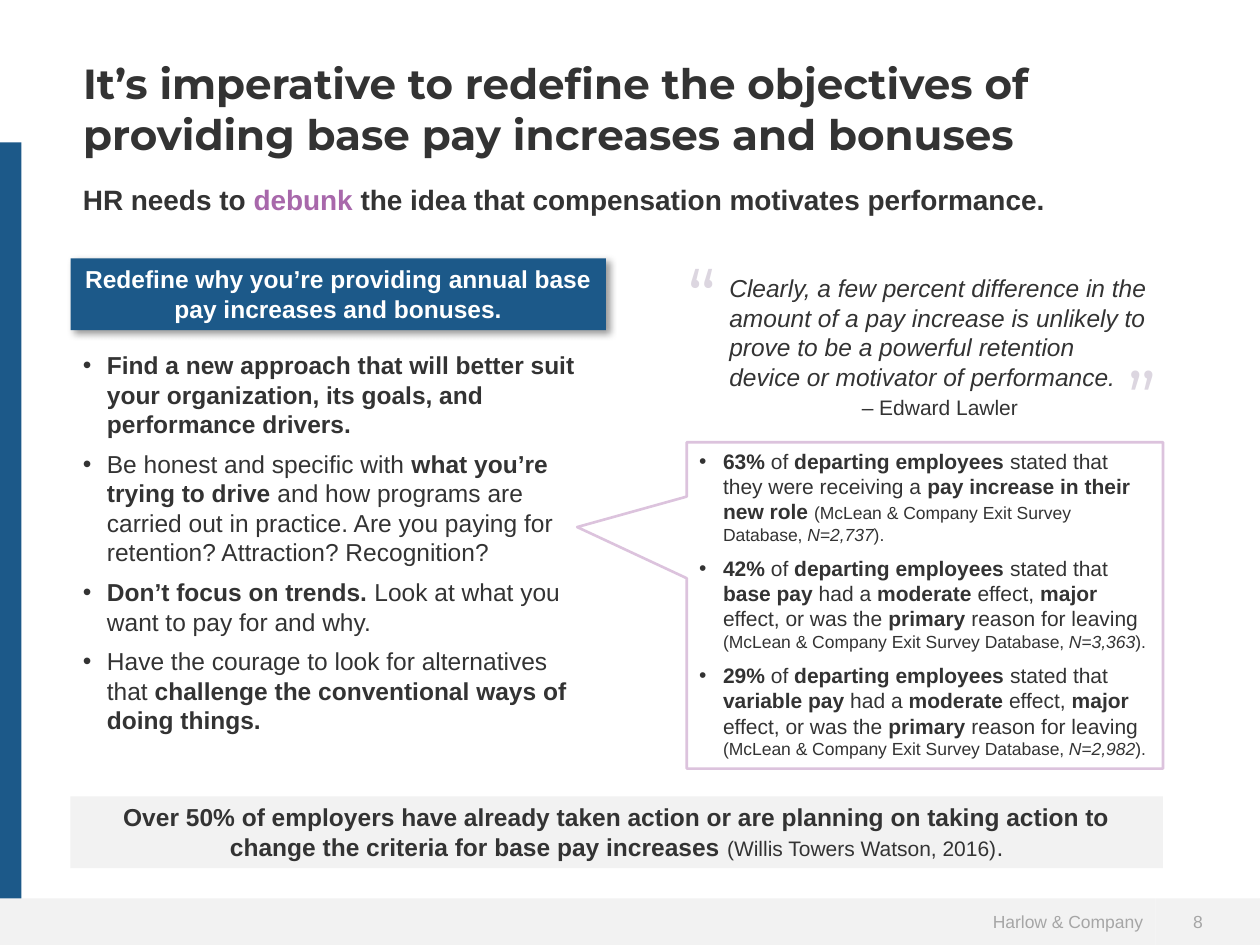
import dataclasses
import typing

import lxml.etree
import pptx
import pptx.dml.color
import pptx.enum.shapes
import pptx.enum.text
import pptx.oxml.ns
import pptx.util

ALIGN = pptx.enum.text.PP_ALIGN
ANCHOR = pptx.enum.text.MSO_ANCHOR
SHAPE = pptx.enum.shapes.MSO_SHAPE
COLUMNS, ROWS = 100, 75


@dataclasses.dataclass(frozen=True)
class Theme:
    navy: str = "1C5989"
    purple: str = "A868AB"
    lilac: str = "DCC3DD"
    quote_mark: str = "DCD6E0"
    band: str = "F2F2F2"
    ink: str = "333333"
    muted: str = "A6A6A6"
    white: str = "FFFFFF"
    heading_font: str = "Montserrat"
    body_font: str = "Arial"
    title: int = 24
    subtitle: int = 16
    body: int = 14
    detail: int = 12
    small: int = 10
    mark: int = 44


@dataclasses.dataclass(frozen=True)
class Cell:
    column: float
    row: float
    columns: float
    rows: float


@dataclasses.dataclass(frozen=True)
class Run:
    text: str
    bold: bool = False
    italic: bool = False
    size: typing.Optional[int] = None
    color: typing.Optional[str] = None


THEME = Theme()
Paragraph = typing.List[Run]

deck = pptx.Presentation()
deck.slide_width = pptx.util.Inches(10)
deck.slide_height = pptx.util.Inches(7.5)
slide = deck.slides.add_slide(deck.slide_layouts[5])


def place(cell: Cell) -> typing.Tuple[int, int, int, int]:
    across, down = deck.slide_width / COLUMNS, deck.slide_height / ROWS
    return (round(cell.column * across), round(cell.row * down),
            round(cell.columns * across), round(cell.rows * down))


def rgb(value: str) -> pptx.dml.color.RGBColor:
    return pptx.dml.color.RGBColor.from_string(value)


def marked(text: str) -> Paragraph:
    return [Run(part, bold=bool(index % 2))
            for index, part in enumerate(text.split("*")) if part]


def survey(text: str, sample: str) -> Paragraph:
    return marked(text) + [
        Run("(McLean & Company Exit Survey Database, ", size=THEME.small),
        Run(f"N={sample}", italic=True, size=THEME.small),
        Run(").", size=THEME.small)]


def add_bullet(paragraph) -> None:
    properties = paragraph._p.get_or_add_pPr()
    hang = pptx.util.Inches(0.19)
    properties.set("marL", str(hang))
    properties.set("indent", str(-hang))
    for tag, name, value in (("a:buFont", "typeface", THEME.body_font),
                             ("a:buChar", "char", "•")):
        lxml.etree.SubElement(properties, pptx.oxml.ns.qn(tag)).set(name, value)


def write(shape, paragraphs: typing.List[Paragraph], *, size: int = THEME.body,
          color: str = THEME.ink, font: str = THEME.body_font, align=ALIGN.LEFT,
          anchor=ANCHOR.TOP, bullets: bool = False, inset_left: float = 0.1,
          inset_y: float = 0.05) -> None:
    frame = shape.text_frame
    frame.word_wrap = True
    frame.auto_size = pptx.enum.text.MSO_AUTO_SIZE.NONE
    frame.vertical_anchor = anchor
    frame.margin_left = pptx.util.Inches(inset_left)
    frame.margin_right = pptx.util.Inches(0.1)
    frame.margin_top = frame.margin_bottom = pptx.util.Inches(inset_y)
    for index, pieces in enumerate(paragraphs):
        paragraph = frame.add_paragraph() if index else frame.paragraphs[0]
        paragraph.alignment = align
        if bullets:
            paragraph.space_after = pptx.util.Pt(6)
            add_bullet(paragraph)
        for piece in pieces:
            run = paragraph.add_run()
            run.text = piece.text
            run.font.name = font
            run.font.size = pptx.util.Pt(piece.size or size)
            run.font.bold = piece.bold
            run.font.italic = piece.italic
            run.font.color.rgb = rgb(piece.color or color)


def add_panel(cell: Cell, fill: typing.Optional[str] = None,
              line: typing.Optional[str] = None, kind=SHAPE.RECTANGLE):
    panel = slide.shapes.add_shape(kind, *place(cell))
    panel.shadow.inherit = False
    if fill:
        panel.fill.solid()
        panel.fill.fore_color.rgb = rgb(fill)
    else:
        panel.fill.background()
    if line:
        panel.line.color.rgb = rgb(line)
        panel.line.width = pptx.util.Pt(1.5)
    else:
        panel.line.fill.background()
    return panel


def add_text(cell: Cell, paragraphs: typing.List[Paragraph], **style) -> None:
    write(slide.shapes.add_textbox(*place(cell)), paragraphs, **style)


def cast_shadow(shape) -> None:
    effects = shape._element.spPr.find(pptx.oxml.ns.qn("a:effectLst"))
    shadow = lxml.etree.SubElement(
        effects, pptx.oxml.ns.qn("a:outerShdw"), blurRad=str(pptx.util.Pt(4)),
        dist=str(pptx.util.Pt(3)), dir=str(45 * 60000), algn="tl", rotWithShape="0")
    tint = lxml.etree.SubElement(shadow, pptx.oxml.ns.qn("a:srgbClr"), val="000000")
    lxml.etree.SubElement(tint, pptx.oxml.ns.qn("a:alpha"), val="40000")


def add_frame() -> None:
    footer = add_panel(Cell(0, 71.3, 91.7, 3.7), THEME.band)
    write(footer, [[Run("Harlow & Company")]], size=THEME.small, color=THEME.muted,
          align=ALIGN.RIGHT, anchor=ANCHOR.MIDDLE)
    page_number = add_panel(Cell(91.7, 71.3, 8.3, 3.7), THEME.band)
    write(page_number, [[Run("8")]], size=THEME.small, color=THEME.muted,
          anchor=ANCHOR.MIDDLE, inset_left=0.3)
    add_panel(Cell(0, 11.3, 1.7, 60), THEME.navy)


def add_headings() -> None:
    title = slide.shapes.title
    title.left, title.top, title.width, title.height = place(Cell(5.6, 4.1, 88.9, 9.4))
    write(title, [marked("*It’s imperative to redefine the objectives of "
                         "providing base pay increases and bonuses*")],
          size=THEME.title, font=THEME.heading_font)
    add_text(Cell(5.6, 14, 86.7, 3.7), [[
        Run("HR needs to ", bold=True),
        Run("debunk ", bold=True, color=THEME.purple),
        Run("the idea that compensation motivates performance.", bold=True)]],
        size=THEME.subtitle)


def add_advice() -> None:
    banner = add_panel(Cell(5.6, 20.5, 42.5, 5.7), THEME.navy)
    cast_shadow(banner)
    write(banner, [marked("*Redefine why you’re providing annual base pay "
                          "increases and bonuses.*")],
          color=THEME.white, align=ALIGN.CENTER)
    add_text(Cell(5.6, 27.3, 42.5, 31.8), [
        marked("*Find a new approach that will better suit your organization, "
               "its goals, and performance drivers.*"),
        marked("Be honest and specific with *what you’re trying to drive* and how "
               "programs are carried out in practice. Are you paying for retention? "
               "Attraction? Recognition?"),
        marked("*Don’t focus on trends. *Look at what you want to pay for and why."),
        marked("Have the courage to look for alternatives that *challenge the "
               "conventional ways of doing things.*")], bullets=True)


def add_evidence() -> None:
    callout = add_panel(Cell(54.5, 35.1, 37.8, 25.9), line=THEME.lilac,
                        kind=SHAPE.RECTANGULAR_CALLOUT)
    callout.adjustments[0], callout.adjustments[1] = -0.73, -0.24
    reason = ("*{}* of *departing employees* stated that *{}* had a *moderate* effect, "
              "*major* effect, or was the *primary* reason for leaving ")
    write(callout, [
        survey("*63%* of *departing employees* stated that they were receiving a "
               "*pay increase in their new role *", "2,737"),
        survey(reason.format("42%", "base pay"), "3,363"),
        survey(reason.format("29%", "variable pay"), "2,982")],
        size=THEME.detail, bullets=True)


def add_quote() -> None:
    add_text(Cell(56.9, 21.2, 35.3, 10.4), [[Run(
        "Clearly, a few percent difference in the amount of a pay increase is unlikely "
        "to prove to be a powerful retention device or motivator of performance.",
        italic=True)]])
    for mark, cell, inset in (("“", Cell(53.6, 19.8, 4.1, 7.4), 0),
                              ("”", Cell(88.5, 27.4, 3.9, 8.4), 0.05)):
        add_text(cell, [[Run(mark)]], size=THEME.mark, color=THEME.quote_mark,
                 font=THEME.heading_font, align=ALIGN.CENTER, inset_y=inset)
    add_text(Cell(62, 30.8, 25.2, 3), [[Run("– Edward Lawler")]],
             size=THEME.detail, align=ALIGN.CENTER)


def add_takeaway() -> None:
    takeaway = add_panel(Cell(5.6, 63.2, 86.7, 5.7), THEME.band)
    write(takeaway, [[
        Run("Over 50% of employers have already taken action or are planning on taking "
            "action to change the criteria for base pay increases ", bold=True),
        Run("(Willis Towers Watson, 2016)", size=THEME.detail),
        Run(".")]], align=ALIGN.CENTER)


if __name__ == "__main__":
    add_frame()
    add_headings()
    add_takeaway()
    add_advice()
    add_evidence()
    add_quote()
    deck.save("out.pptx")
